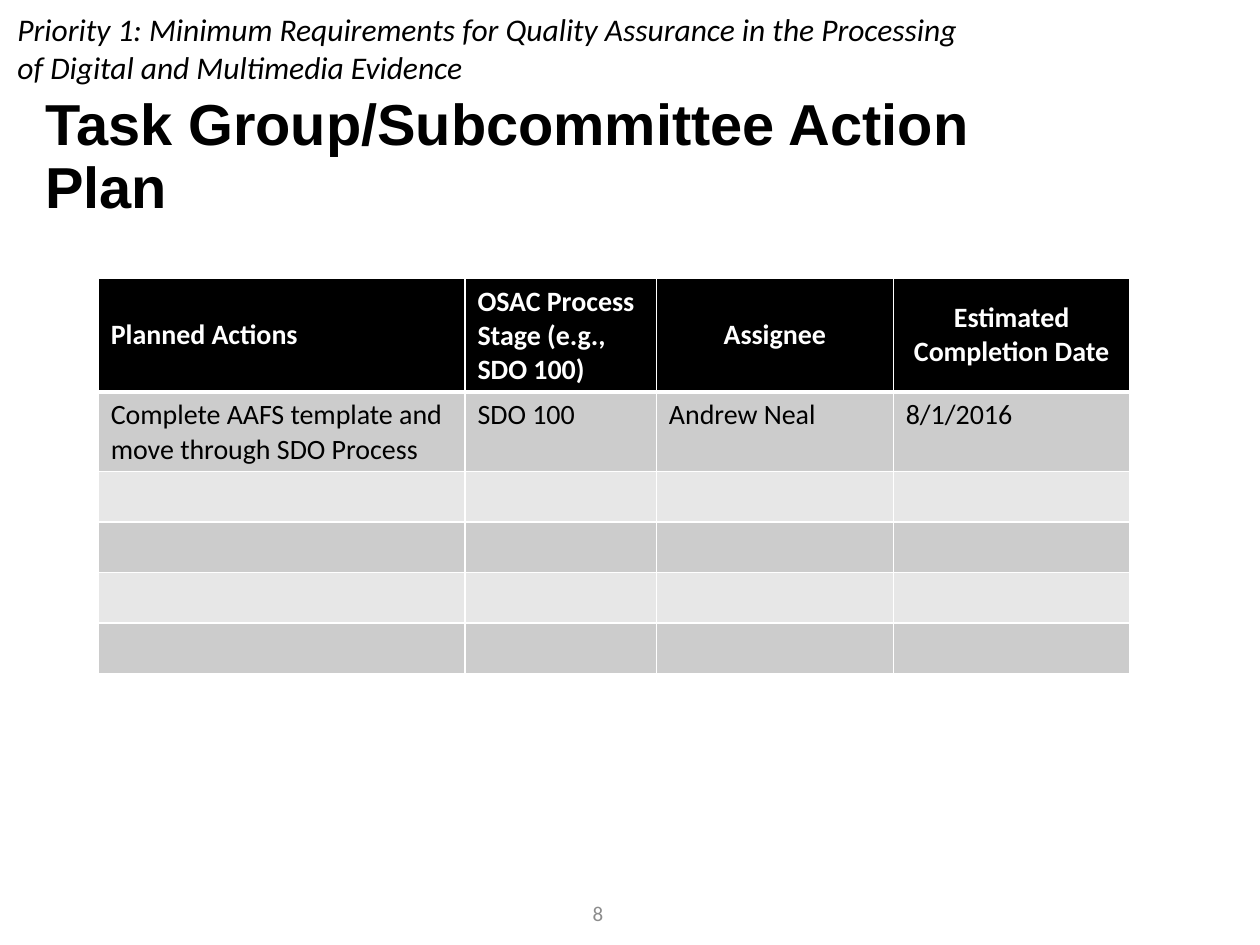
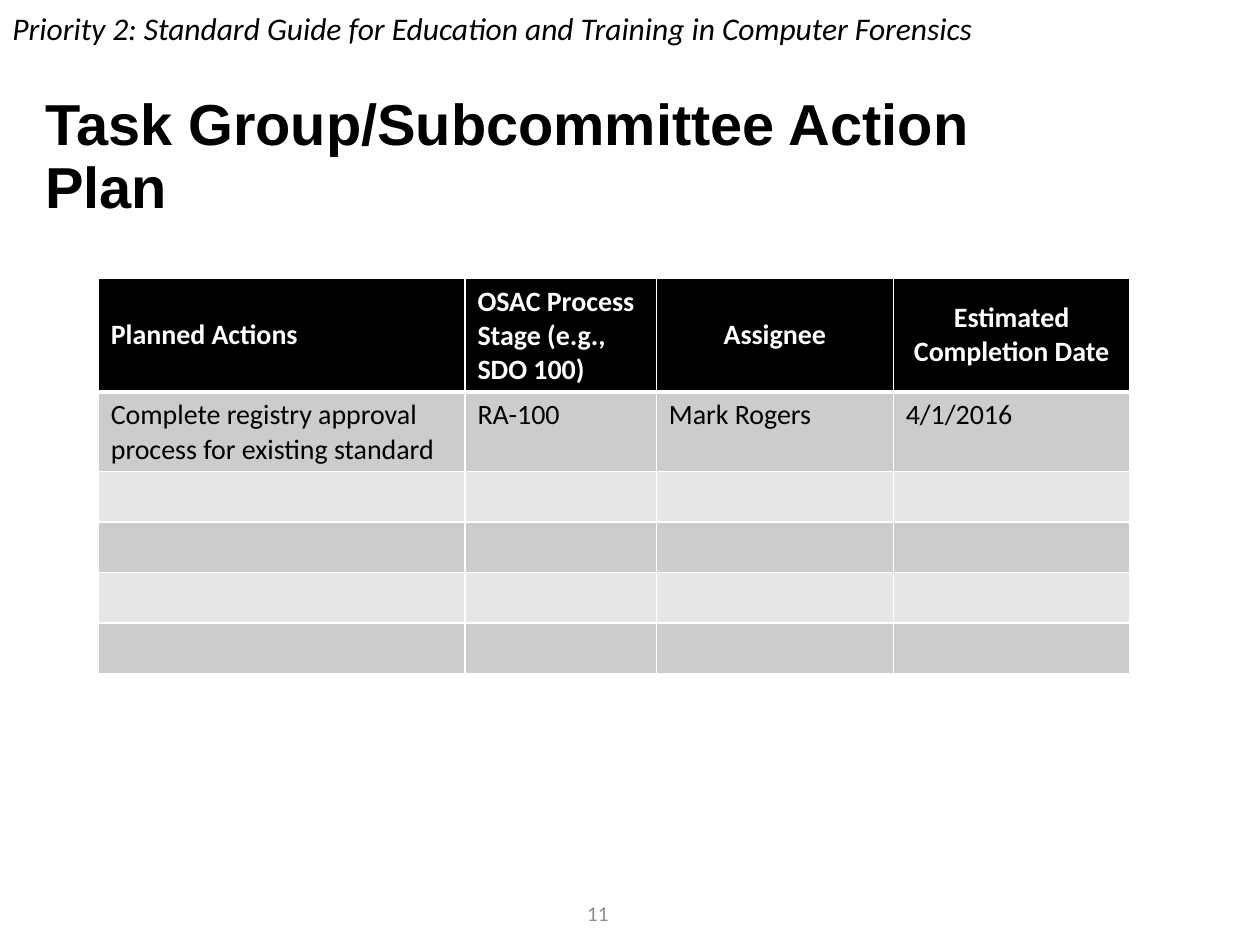
"""Build two action plan slides, each with a priority line, a title, a table and a page number."""
from lxml import etree
from pptx import Presentation
from pptx.dml.color import RGBColor
from pptx.enum import text
from pptx.oxml import ns
from pptx.util import Inches, Pt

BLACK = RGBColor(0x00, 0x00, 0x00)
WHITE = RGBColor(0xFF, 0xFF, 0xFF)
GREY = RGBColor(0x8C, 0x8C, 0x8C)
BAND_DARK = RGBColor(0xCC, 0xCC, 0xCC)
BAND_LIGHT = RGBColor(0xE7, 0xE7, 0xE7)
LEFT, CENTER = text.PP_ALIGN.LEFT, text.PP_ALIGN.CENTER
TOP, MIDDLE = text.MSO_ANCHOR.TOP, text.MSO_ANCHOR.MIDDLE

TITLE = "Task Group/Subcommittee Action Plan"
HEADERS = ["Planned Actions", "OSAC Process Stage (e.g., SDO 100)",
           "Assignee", "Estimated Completion Date"]
HEADER_ALIGN = [LEFT, LEFT, CENTER, CENTER]
COL_WIDTHS = [2.91, 1.52, 1.88, 1.88]
ROW_HEIGHTS = [0.67] + [0.4] * 5
SLIDES = [
    (["Priority 1: Minimum Requirements for Quality Assurance in the Processing",
      "of Digital and Multimedia Evidence"], (0.04, 0.03, 9.59, 0.71),
     ["Complete AAFS template and move through SDO Process", "SDO 100",
      "Andrew Neal", "8/1/2016"], "8"),
    (["Priority 2: Standard Guide for Education and Training in Computer Forensics"],
     (0, 0.02, 8.52, 0.4),
     ["Complete registry approval process for existing standard", "RA-100",
      "Mark Rogers", "4/1/2016"], "11"),
]


def write(tf, lines, size=16, font="Calibri", color=BLACK, bold=False, italic=False,
          align=LEFT, anchor=TOP, spacing=None):
    tf.word_wrap = True
    tf.vertical_anchor = anchor
    for i, line in enumerate(lines):
        p = tf.add_paragraph() if i else tf.paragraphs[0]
        p.alignment = align
        p.line_spacing = spacing
        r = p.add_run()
        r.text = line
        r.font.size, r.font.name, r.font.color.rgb = Pt(size), font, color
        r.font.bold, r.font.italic = bold, italic


def add_border(cell, side, points):
    ln = etree.SubElement(cell._tc.get_or_add_tcPr(), ns.qn(f"a:ln{side}"), w=str(Pt(points)))
    fill = etree.SubElement(ln, ns.qn("a:solidFill"))
    etree.SubElement(fill, ns.qn("a:srgbClr"), val=str(WHITE))


prs = Presentation()
prs.slide_width, prs.slide_height = Inches(10), Inches(7.5)

for priority, priority_box, action, page in SLIDES:
    s = prs.slides.add_slide(prs.slide_layouts[6])

    sp = s.shapes.add_textbox(Inches(0.26), Inches(0.53), Inches(8.6), Inches(1.45))
    write(sp.text_frame, [TITLE], size=33, font="Arial", bold=True, anchor=MIDDLE, spacing=0.9)

    table = s.shapes.add_table(len(ROW_HEIGHTS), len(COL_WIDTHS), Inches(0.78), Inches(2.21),
                               Inches(sum(COL_WIDTHS)), Inches(sum(ROW_HEIGHTS))).table
    for col, width in zip(table.columns, COL_WIDTHS):
        col.width = Inches(width)
    for i, height in enumerate(ROW_HEIGHTS):
        table.rows[i].height = Inches(height)
        for j, cell in enumerate(table.rows[i].cells):
            for side in "LRTB":
                add_border(cell, side, 3 if (i, side) in [(0, "B"), (1, "T")] else 1)
            cell.fill.solid()
            cell.fill.fore_color.rgb = BLACK if i == 0 else BAND_DARK if i % 2 else BAND_LIGHT
            if i == 0:
                write(cell.text_frame, [HEADERS[j]], color=WHITE, bold=True,
                      align=HEADER_ALIGN[j])
                cell.vertical_anchor = MIDDLE
            elif i == 1:
                write(cell.text_frame, [action[j]])

    sp = s.shapes.add_textbox(*map(Inches, priority_box))
    write(sp.text_frame, priority, size=18, italic=True)

    sp = s.shapes.add_textbox(Inches(3.62), Inches(7.05), Inches(2.25), Inches(0.4))
    write(sp.text_frame, [page], size=12, color=GREY, align=CENTER, anchor=MIDDLE)

prs.save("out.pptx")
